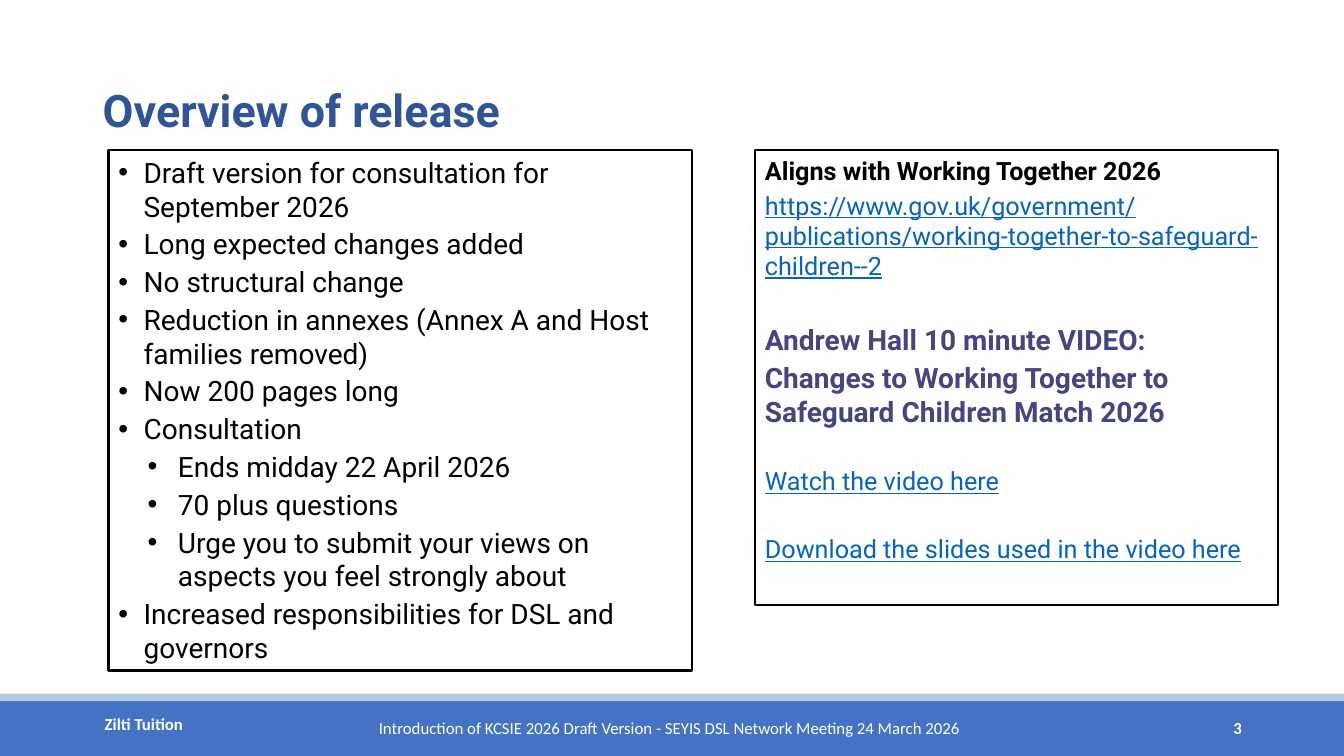
from dataclasses import dataclass

from lxml.etree import SubElement
from pptx import Presentation
from pptx.dml.color import RGBColor
from pptx.enum.shapes import MSO_SHAPE
from pptx.enum.text import MSO_ANCHOR, MSO_AUTO_SIZE, PP_ALIGN
from pptx.oxml.ns import qn
from pptx.util import Pt


@dataclass(frozen=True)
class Theme:
    body_face: str = "Roboto"
    footer_face: str = "Calibri"
    bullet_face: str = "Arial"
    title_size: int = 32
    large_size: int = 20
    link_size: int = 18
    footer_size: int = 12
    title: str = "2F5597"
    ink: str = "000000"
    link: str = "0563C1"
    video: str = "444583"
    band: str = "4472C4"
    stripe: str = "B4C7E7"
    light: str = "FFFFFF"


@dataclass(frozen=True)
class Box:
    left: float
    top: float
    width: float
    height: float

    def place(self):
        return [Pt(side) for side in (self.left, self.top, self.width, self.height)]

    def inner(self, left, top, width, height):
        return Box(self.left + left, self.top + top, width, height)


THEME = Theme()
PAGE = Box(0, 0, 960, 540)
PARAGRAPH_GAP = 3
INDENTS = ((18, -18), (42.5, -21.6))

RELEASE_POINTS = (
    (0, "Draft version for consultation for September 2026"),
    (0, "Long expected changes added"),
    (0, "No structural change"),
    (0, "Reduction in annexes (Annex A and Host families removed)"),
    (0, "Now 200 pages long"),
    (0, "Consultation"),
    (1, "Ends midday 22 April 2026"),
    (1, "70 plus questions"),
    (1, "Urge you to submit your views on aspects you feel strongly about"),
    (0, "Increased responsibilities for DSL and governors"),
)

HEADING = {"size": Pt(THEME.link_size), "bold": True}
LINK = {"size": Pt(THEME.link_size), "underline": True}
VIDEO = {"size": Pt(THEME.large_size), "bold": True}
RESOURCES = (
    ("Aligns with Working Together 2026", HEADING, THEME.ink, PARAGRAPH_GAP),
    ("https://www.gov.uk/government/publications/working-together-to-safeguard-children--2",
     LINK, THEME.link, 30),
    ("Andrew Hall 10 minute VIDEO:", VIDEO, THEME.video, PARAGRAPH_GAP),
    ("Changes to Working Together to Safeguard Children Match 2026", VIDEO, THEME.video, 27),
    ("Watch the video here", LINK, THEME.link, 27),
    ("Download the slides used in the video here", LINK, THEME.link, PARAGRAPH_GAP),
)


def apply(target, values):
    for attribute, value in values.items():
        setattr(target, attribute, value)


def write(paragraph, text, color, font, layout):
    run = paragraph.add_run()
    run.text = text
    apply(paragraph, layout)
    apply(run.font, font)
    run.font.color.rgb = RGBColor.from_string(color)


def paragraphs(frame, count):
    yield frame.paragraphs[0]
    for _ in range(count - 1):
        yield frame.add_paragraph()


def add_bullet(paragraph, level):
    margin, hanging = INDENTS[level]
    properties = paragraph._p.get_or_add_pPr()
    properties.set("marL", str(Pt(margin)))
    properties.set("indent", str(Pt(hanging)))
    SubElement(properties, qn("a:buFont"), typeface=THEME.bullet_face)
    SubElement(properties, qn("a:buChar"), char="•")


def add_strip(slide, box, color):
    strip = slide.shapes.add_shape(MSO_SHAPE.RECTANGLE, *box.place())
    strip.shadow.inherit = False
    strip.fill.solid()
    strip.fill.fore_color.rgb = RGBColor.from_string(color)
    strip.line.fill.background()


def add_panel(slide, box):
    panel = slide.shapes.add_textbox(*box.place())
    panel.line.color.rgb = RGBColor.from_string(THEME.ink)
    panel.line.width = Pt(1.5)
    panel.text_frame.word_wrap = True
    return panel.text_frame


def add_footer(slide, box):
    add_strip(slide, box.inner(0, 5, box.width, box.height - 5), THEME.band)
    add_strip(slide, box.inner(0, 0, box.width, 5.5), THEME.stripe)
    entries = (
        ("Zilti Tuition", box.inner(67.7, 11, 85, 21.6), True, PP_ALIGN.LEFT),
        ("Introduction of KCSIE 2026 Draft Version - SEYIS DSL Network Meeting 24 March 2026",
         box.inner(263.5, 13.8, 446.4, 21.6), False, PP_ALIGN.LEFT),
        ("3", box.inner(678.2, 13.8, 216, 21.6), True, PP_ALIGN.RIGHT),
    )
    for text, place, bold, alignment in entries:
        frame = slide.shapes.add_textbox(*place.place()).text_frame
        frame.word_wrap = True
        font = {"name": THEME.footer_face, "size": Pt(THEME.footer_size), "bold": bold}
        write(frame.paragraphs[0], text, THEME.light, font, {"alignment": alignment})


def add_title(slide, box):
    heading = slide.shapes.title
    apply(heading, dict(zip(("left", "top", "width", "height"), box.place())))
    apply(heading.text_frame, {"word_wrap": True, "auto_size": MSO_AUTO_SIZE.NONE,
                               "vertical_anchor": MSO_ANCHOR.MIDDLE})
    font = {"name": THEME.body_face, "size": Pt(THEME.title_size), "bold": True}
    write(heading.text_frame.paragraphs[0], "Overview of release", THEME.title, font,
          {"alignment": PP_ALIGN.LEFT, "line_spacing": 0.9})


def add_release_points(slide, box):
    frame = add_panel(slide, box)
    font = {"name": THEME.body_face, "size": Pt(THEME.large_size)}
    rows = paragraphs(frame, len(RELEASE_POINTS))
    for paragraph, (level, text) in zip(rows, RELEASE_POINTS):
        add_bullet(paragraph, level)
        write(paragraph, text, THEME.ink, font,
              {"level": level, "space_after": Pt(PARAGRAPH_GAP)})


def add_resources(slide, box):
    frame = add_panel(slide, box)
    rows = paragraphs(frame, len(RESOURCES))
    for paragraph, (text, font, color, gap) in zip(rows, RESOURCES):
        write(paragraph, text, color, {"name": THEME.body_face, **font},
              {"space_after": Pt(gap)})


def build_overview(presentation, box):
    slide = presentation.slides.add_slide(presentation.slide_layouts[5])
    add_footer(slide, box.inner(0, 495.4, box.width, 44.6))
    add_title(slide, box.inner(66.2, 28.8, 828, 104.4))
    add_release_points(slide, box.inner(77.5, 107.5, 417, 371.5))
    add_resources(slide, box.inner(539.3, 107.5, 373.7, 324.5))


def main():
    presentation = Presentation()
    presentation.slide_width = Pt(PAGE.width)
    presentation.slide_height = Pt(PAGE.height)
    build_overview(presentation, PAGE)
    presentation.save("out.pptx")


if __name__ == "__main__":
    main()
